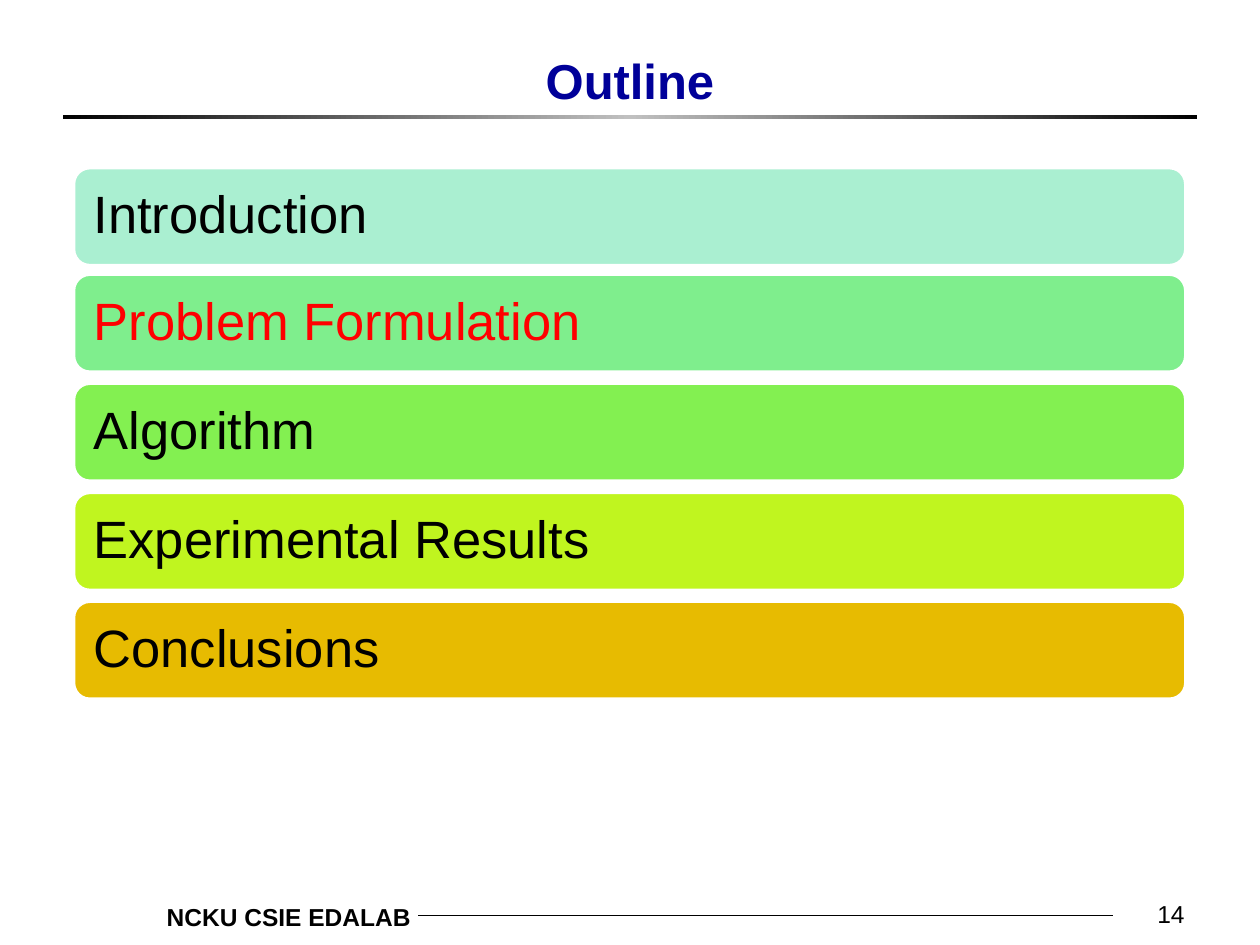
from copy import deepcopy

from pptx import Presentation
from pptx.dml.color import RGBColor
from pptx.enum.shapes import MSO_CONNECTOR, MSO_SHAPE
from pptx.enum.text import MSO_ANCHOR, PP_ALIGN
from pptx.oxml.ns import qn
from pptx.util import Pt
from lxml.etree import SubElement

BLACK, RED, NAVY, SILVER, WHITE = "000000", "FF0000", "000099", "C0C0C0", "FFFFFF"

TOPICS = [
    ("Introduction", 95.8, "AAEFD1", BLACK),
    ("Problem Formulation", 156.7, "7FEE8D", RED),
    ("Algorithm", 219, "83F051", BLACK),
    ("Experimental Results", 281.4, "C0F51F", BLACK),
    ("Conclusions", 343.6, "E7BB01", BLACK),
]


def color(value):
    return RGBColor.from_string(value)


def add_span(para, text, size, value, bold=False):
    span = para.add_run()
    span.text = text
    span.font.name = "Arial"
    span.font.size = Pt(size)
    span.font.bold = bold
    span.font.color.rgb = color(value)


def add_text(page, text, bounds, size, value, align, bold=False, anchor=MSO_ANCHOR.BOTTOM):
    box = page.shapes.add_textbox(*map(Pt, bounds))
    frame = box.text_frame
    frame.word_wrap = True
    frame.vertical_anchor = anchor
    para = frame.paragraphs[0]
    para.alignment = align
    add_span(para, text, size, value, bold)


def add_title_bar(page):
    bar = page.shapes.add_shape(MSO_SHAPE.RECTANGLE, Pt(36), Pt(66), Pt(648), Pt(2.25))
    bar.shadow.inherit = False
    bar.line.fill.background()
    bar.fill.gradient()
    bar.fill.gradient_angle = 0
    first = bar._element.spPr.find(".//" + qn("a:gs"))
    first.addnext(deepcopy(first))
    for stop, position, value in zip(bar.fill.gradient_stops, (0, 0.5, 1), (BLACK, SILVER, BLACK)):
        stop.position = position
        stop.color.rgb = color(value)


def add_footer_line(page):
    line = page.shapes.add_connector(MSO_CONNECTOR.STRAIGHT, Pt(239), Pt(523.2), Pt(636.2), Pt(523.2))
    line.line.color.rgb = color(BLACK)
    line.line.width = Pt(0.5)
    SubElement(line._element.spPr, qn("a:effectLst"))


def add_topic(page, text, top, fill, text_color):
    box = page.shapes.add_shape(MSO_SHAPE.ROUNDED_RECTANGLE, Pt(42), Pt(top), Pt(635.6), Pt(56))
    box.shadow.inherit = False
    box.fill.solid()
    box.fill.fore_color.rgb = color(fill)
    box.line.color.rgb = color(WHITE)
    box.line.width = Pt(2)
    frame = box.text_frame
    frame.word_wrap = True
    frame.vertical_anchor = MSO_ANCHOR.MIDDLE
    frame.margin_left = frame.margin_right = frame.margin_top = frame.margin_bottom = Pt(8.8)
    para = frame.paragraphs[0]
    para.alignment = PP_ALIGN.LEFT
    para.line_spacing = 0.9
    add_span(para, text, 30, text_color)


def main():
    deck = Presentation()
    deck.slide_width, deck.slide_height = Pt(720), Pt(540)
    page = deck.slides.add_slide(deck.slide_layouts[6])
    add_title_bar(page)
    add_footer_line(page)
    add_text(page, "NCKU CSIE EDALAB", (67.7, 512, 174.2, 24.5), 14, BLACK, PP_ALIGN.RIGHT, True, MSO_ANCHOR.TOP)
    add_text(page, "Outline", (54, 0, 612, 66), 28, NAVY, PP_ALIGN.CENTER, True)
    add_text(page, "14", (534, 498, 150, 36), 14, BLACK, PP_ALIGN.RIGHT)
    for topic in TOPICS:
        add_topic(page, *topic)
    deck.save("out.pptx")


if __name__ == "__main__":
    main()
